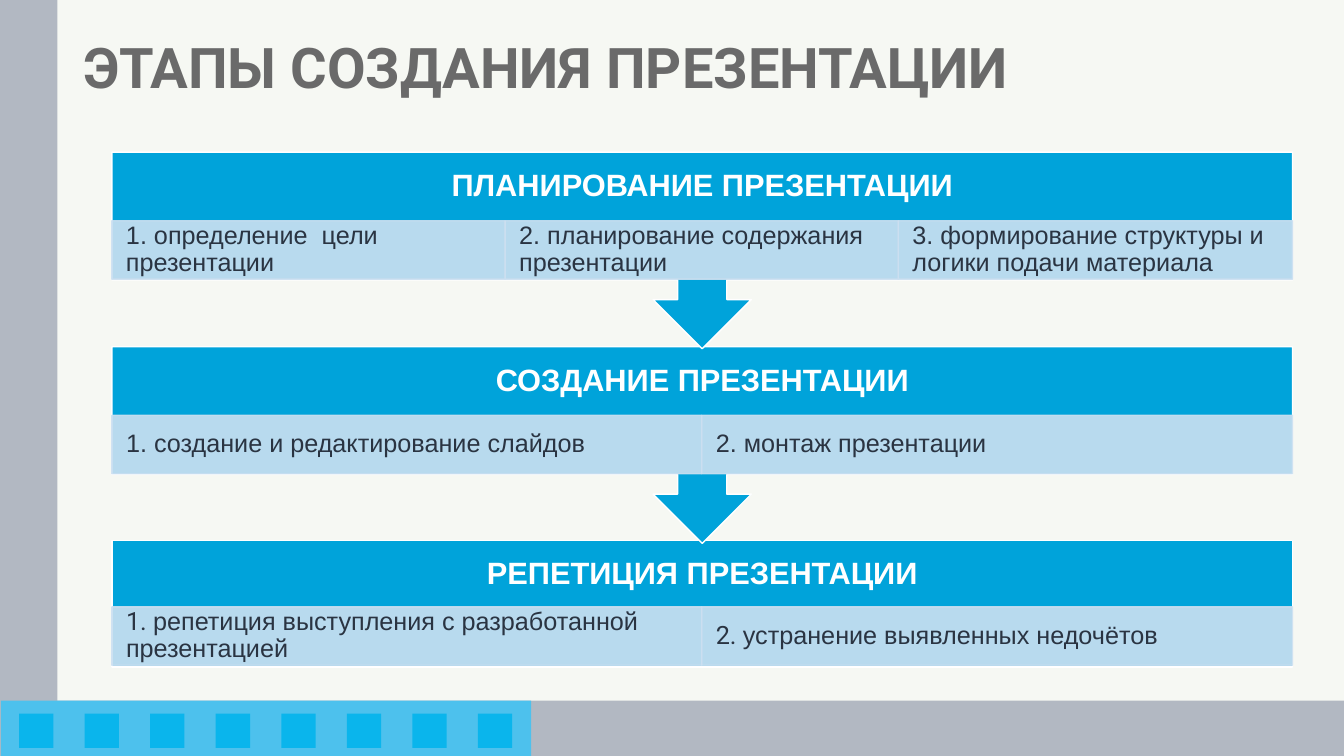
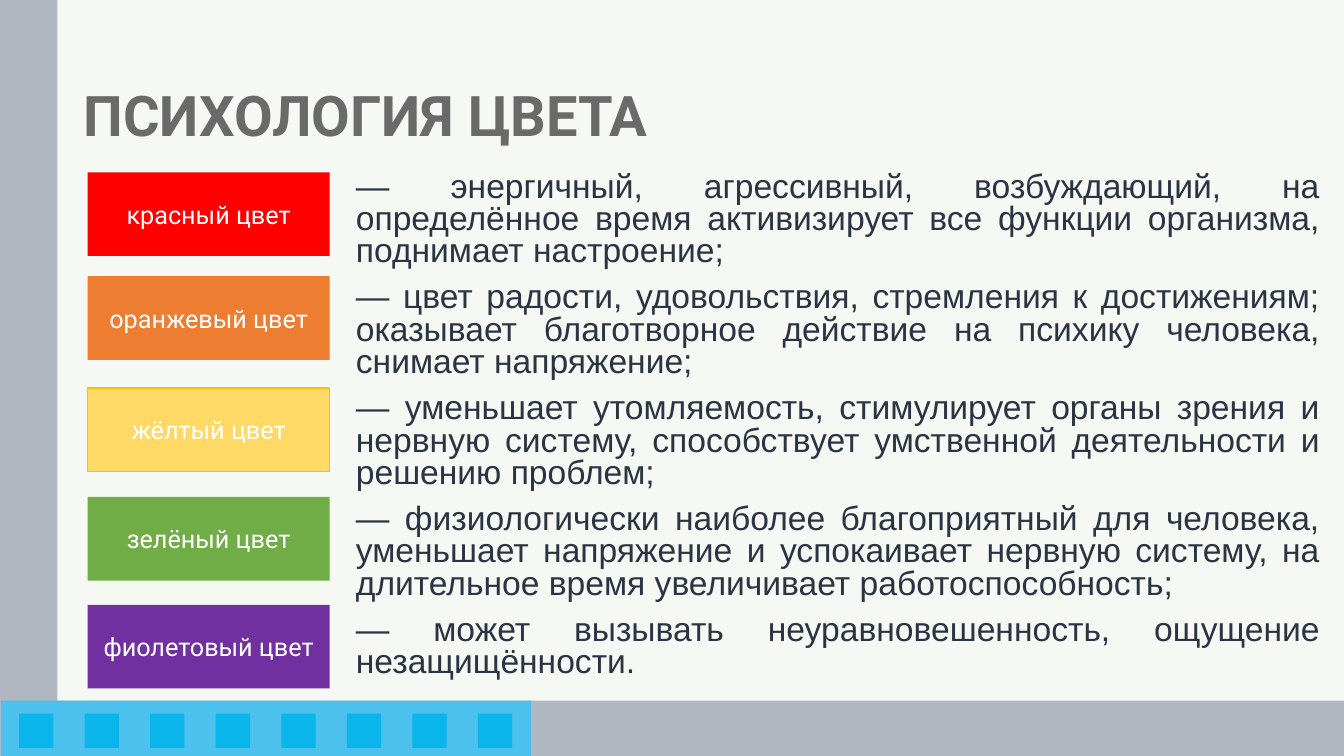
from dataclasses import dataclass

from lxml.etree import SubElement
from pptx import Presentation
from pptx.dml.color import RGBColor
from pptx.enum.shapes import MSO_SHAPE
from pptx.enum.text import MSO_ANCHOR, MSO_AUTO_SIZE, PP_ALIGN
from pptx.oxml.ns import qn
from pptx.util import Pt

PX = 9144  # EMU in one px; 100 px make an inch
WIDTH, HEIGHT = 1333, 750
TITLE_ONLY, TITLE_AND_BODY = 5, 1


@dataclass(frozen=True)
class Theme:
    background: str = "F6F8F3"
    band: str = "B2B8C2"
    ribbon: str = "4DC1ED"
    ribbon_square: str = "0AB5EC"
    title: str = "6A6A6A"
    text: str = "2A3442"
    white: str = "FFFFFF"
    stage: str = "00A3DA"
    step: str = "CCE0F1"
    heading_font: str = "Roboto"
    body_font: str = "Arial"
    title_size: int = 40
    body_size: int = 24
    stage_size: int = 22
    label_size: int = 18


class Deck:
    def __init__(self, theme):
        self.theme = theme
        self.presentation = Presentation()
        self.presentation.slide_width = WIDTH * PX
        self.presentation.slide_height = HEIGHT * PX
        self.slide = None

    def add_slide(self, layout_index):
        layout = self.presentation.slide_layouts[layout_index]
        self.slide = self.presentation.slides.add_slide(layout)

    def decorate_master(self):
        """Move the bands and the ribbon of squares to the slide master."""
        theme = self.theme
        master = self.presentation.slide_master
        master.background.fill.solid()
        master.background.fill.fore_color.rgb = RGBColor.from_string(theme.background)
        decor = [
            self.block((0, 0, 57, HEIGHT), theme.band),
            self.block((0, 695, WIDTH, 55), theme.band),
            self.block((1, 695, 526, 55), theme.ribbon),
        ]
        decor += [self.block((19 + 65 * i, 708, 34, 34), theme.ribbon_square)
                  for i in range(8)]
        for shape_id, part in enumerate(decor, start=100):
            part.element.nvSpPr.cNvPr.set("id", str(shape_id))
            master.shapes.element.append(part.element)

    def place(self, shape, box):
        shape.left, shape.top, shape.width, shape.height = (v * PX for v in box)

    def block(self, box, fill, line=None, preset=MSO_SHAPE.RECTANGLE, opacity=100):
        block = self.slide.shapes.add_shape(preset, *(v * PX for v in box))
        block.shadow.inherit = False
        block.fill.solid()
        block.fill.fore_color.rgb = RGBColor.from_string(fill)
        if line:
            block.line.color.rgb = RGBColor.from_string(line)
            block.line.width = Pt(1)
        else:
            block.line.fill.background()
        if opacity < 100:
            for color in block.element.spPr.iter(qn("a:srgbClr")):
                SubElement(color, qn("a:alpha")).set("val", str(opacity * 1000))
        return block

    def frame(self, shape, anchor=MSO_ANCHOR.MIDDLE, margins=(10, 5)):
        frame = shape.text_frame
        frame.word_wrap = True
        frame.auto_size = MSO_AUTO_SIZE.NONE
        frame.vertical_anchor = anchor
        frame.margin_left = frame.margin_right = margins[0] * PX
        frame.margin_top = frame.margin_bottom = margins[1] * PX
        return frame

    def style(self, paragraph, size, color, font, align, bold=False, spacing=0.9):
        paragraph.alignment = align
        paragraph.line_spacing = spacing
        for run in paragraph.runs:
            run.font.size = Pt(size)
            run.font.bold = bold
            run.font.name = font
            run.font.color.rgb = RGBColor.from_string(color)

    def title(self, text, top):
        title = self.slide.shapes.title
        self.place(title, (73, top, 1188, 139))
        frame = self.frame(title)
        frame.text = text
        self.style(frame.paragraphs[0], self.theme.title_size, self.theme.title,
                   self.theme.heading_font, PP_ALIGN.JUSTIFY, bold=True)

    def body(self, lines, box):
        body = self.slide.placeholders[1]
        self.place(body, box)
        frame = self.frame(body, MSO_ANCHOR.TOP)
        frame.text = "\n".join(lines)
        for paragraph in frame.paragraphs:
            self.style(paragraph, self.theme.body_size, self.theme.text,
                       self.theme.body_font, PP_ALIGN.JUSTIFY, spacing=0.8)
            paragraph.space_before = Pt(10)
            properties = paragraph._p.get_or_add_pPr()
            properties.set("marL", "0")
            properties.set("indent", "0")
            SubElement(properties, qn("a:buNone"))

    def swatch(self, label, box, fill, line):
        frame = self.frame(self.block(box, fill, line))
        frame.text = label
        self.style(frame.paragraphs[0], self.theme.label_size, self.theme.white,
                   self.theme.heading_font, PP_ALIGN.CENTER, spacing=1.0)

    def stage(self, heading, steps, top, is_last):
        """Draw a headed box with a row of numbered steps; all but the last point down."""
        theme = self.theme
        left, width = 111, 1171
        preset = MSO_SHAPE.RECTANGLE if is_last else MSO_SHAPE.DOWN_ARROW_CALLOUT
        self.block((left, top, width, 126 if is_last else 195),
                   theme.stage, theme.white, preset)
        header = self.slide.shapes.add_textbox(
            *(v * PX for v in (left, top, width, 68)))
        frame = self.frame(header, margins=(17, 17))
        frame.text = heading
        self.style(frame.paragraphs[0], theme.stage_size, theme.white,
                   theme.body_font, PP_ALIGN.CENTER, bold=True)

        steps_top = top + (66 if is_last else 68)
        edges = [left + width * i // len(steps) for i in range(len(steps) + 1)]
        for number, step in enumerate(steps, start=1):
            start, end = edges[number - 1:number + 1]
            cell = self.block((start, steps_top, end - start, 58),
                              theme.step, theme.step, opacity=90)
            paragraph = self.frame(cell, margins=(14, 3)).paragraphs[0]
            for text in (f"{number}. ", step):
                paragraph.add_run().text = text
            self.style(paragraph, theme.label_size, theme.text,
                       theme.body_font, PP_ALIGN.LEFT)
            if is_last:
                paragraph.runs[0].font.name = theme.heading_font

    def save(self):
        self.presentation.save("out.pptx")


STAGES = [
    ("ПЛАНИРОВАНИЕ ПРЕЗЕНТАЦИИ", 151, [
        "определение  цели презентации",
        "планирование содержания презентации",
        "формирование структуры и логики подачи материала",
    ]),
    ("СОЗДАНИЕ ПРЕЗЕНТАЦИИ", 344, [
        "создание и редактирование слайдов",
        "монтаж презентации",
    ]),
    ("РЕПЕТИЦИЯ ПРЕЗЕНТАЦИИ", 536, [
        "репетиция выступления с разработанной презентацией",
        "устранение выявленных недочётов",
    ]),
]

# label, top, fill, line, meaning
COLOURS = [
    ("красный цвет", 171, "FF0000", None,
     "— энергичный, агрессивный, возбуждающий, на определённое время "
     "активизирует все функции организма, поднимает настроение;"),
    ("оранжевый цвет", 274, "ED7D31", None,
     "— цвет радости, удовольствия, стремления к достижениям; оказывает "
     "благотворное действие на психику человека, снимает напряжение;"),
    ("жёлтый цвет", 385, "FFD966", "FFC000",
     "— уменьшает утомляемость, стимулирует органы зрения и нервную систему, "
     "способствует умственной деятельности и решению проблем;"),
    ("зелёный цвет", 493, "70AD47", None,
     "— физиологически наиболее благоприятный для человека, уменьшает "
     "напряжение и успокаивает нервную систему, на длительное время "
     "увеличивает работоспособность;"),
    ("фиолетовый цвет", 600, "7030A0", None,
     "— может вызывать неуравновешенность, ощущение незащищённости."),
]


def main():
    deck = Deck(Theme())

    deck.add_slide(TITLE_ONLY)
    deck.decorate_master()
    deck.title("ЭТАПЫ СОЗДАНИЯ ПРЕЗЕНТАЦИИ", top=0)
    # Bottom stage first, so that each arrow tip lies over the next stage
    for heading, top, steps in reversed(STAGES):
        deck.stage(heading, steps, top, is_last=heading == STAGES[-1][0])

    deck.add_slide(TITLE_AND_BODY)
    deck.title("ПСИХОЛОГИЯ ЦВЕТА", top=48)
    deck.body([meaning for *_, meaning in COLOURS], (343, 166, 976, 524))
    for label, top, fill, line, _ in COLOURS:
        deck.swatch(label, (87, top, 240, 83), fill, line)

    deck.save()


if __name__ == "__main__":
    main()
